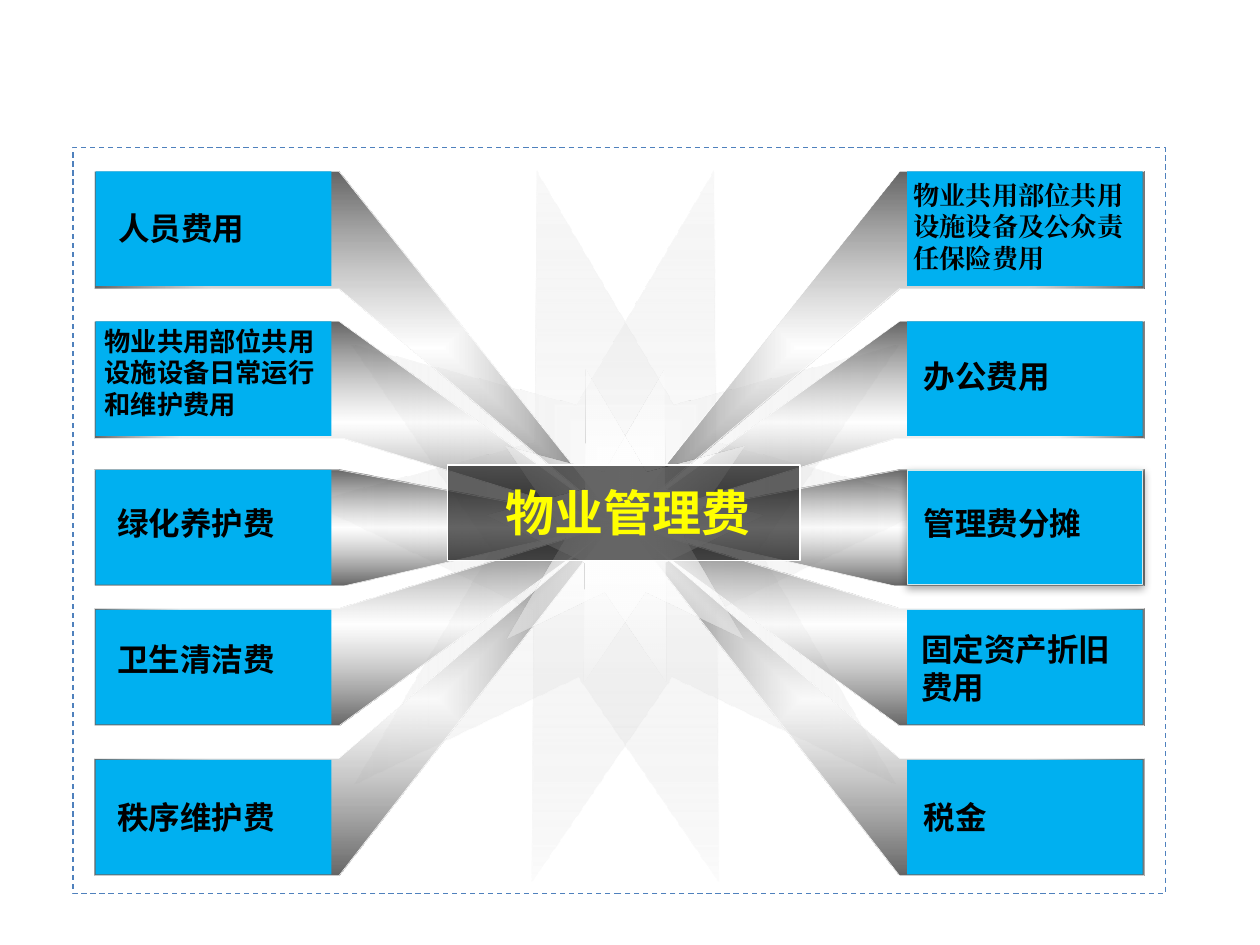
"""Build a slide showing the ten cost items that make up a property management fee."""
from lxml import etree
from pptx import Presentation
from pptx import util as u
from pptx.dml.color import RGBColor
from pptx.enum import dml, shapes, text
from pptx.oxml import parse_xml
from pptx.oxml.ns import nsdecls, qn

BLUE = RGBColor(0x00, 0xB0, 0xF0)
FRAME_BLUE = RGBColor(0x4F, 0x81, 0xBD)
PALE_BLUE = RGBColor(0xD5, 0xE8, 0xEA)
BLACK = RGBColor(0x00, 0x00, 0x00)
WHITE = RGBColor(0xFF, 0xFF, 0xFF)
GREY = RGBColor(0xB6, 0xB6, 0xB6)
YELLOW = RGBColor(0xFF, 0xFF, 0x00)
SANS = "Noto Sans CJK SC"
SERIF = "Times New Roman"
SHADOW = (
    "<a:effectLst %s><a:outerShdw blurRad='{}' dist='{}' dir='{}' algn='tl' rotWithShape='0'>"
    "<a:srgbClr val='000000'><a:alpha val='{}'/></a:srgbClr></a:outerShdw></a:effectLst>" % nsdecls("a")
)


def paint_gradient(shape, path, inner, inner_alpha, outer, outer_alpha):
    """Fill a shape from its centre outwards, with opacity in percent."""
    shape.shadow.inherit = False
    shape.fill.background()
    properties = shape._element.spPr
    gradient = parse_xml(
        f"<a:gradFill {nsdecls('a')} rotWithShape='1'><a:gsLst>"
        f"<a:gs pos='0'><a:srgbClr val='{inner}'><a:alpha val='{inner_alpha * 1000}'/></a:srgbClr></a:gs>"
        f"<a:gs pos='100000'><a:srgbClr val='{outer}'><a:alpha val='{outer_alpha * 1000}'/></a:srgbClr></a:gs>"
        f"</a:gsLst><a:path path='{path}'><a:fillToRect l='50000' t='50000' r='50000' b='50000'/></a:path>"
        "</a:gradFill>"
    )
    properties.replace(properties.find(qn("a:noFill")), gradient)


def add_label(page, place, lines, size, align=None, wrap=False, font=SANS, color=BLACK):
    """Add bold text with a small shadow, one paragraph for each line."""
    box = page.shapes.add_textbox(*map(u.Inches, place))
    frame = box.text_frame
    frame.margin_left = frame.margin_right = frame.margin_top = frame.margin_bottom = 0
    frame.word_wrap = wrap
    frame.auto_size = text.MSO_AUTO_SIZE.SHAPE_TO_FIT_TEXT
    frame.text = "\n".join(lines)
    for para in frame.paragraphs:
        para.alignment = align
        para.font.size = u.Pt(size)
        para.font.bold = True
        para.font.name = font
        para.font.color.rgb = color
        indent = para._p.get_or_add_pPr()
        indent.set("marL", str(u.Inches(0.09)))
        indent.set("indent", str(-u.Inches(0.09)))
        for span in para.runs:
            properties = span._r.get_or_add_rPr()
            properties.append(parse_xml(SHADOW.format(0, 25400, 2700000, 60000)))
            etree.SubElement(properties, qn("a:ea")).set("typeface", font)


deck = Presentation()
deck.slide_width = u.Inches(10)
deck.slide_height = u.Inches(7.5)
page = deck.slides.add_slide(deck.slide_layouts[6])

border = page.shapes.add_shape(
    shapes.MSO_SHAPE.RECTANGLE, u.Inches(0.58), u.Inches(1.17), u.Inches(8.67), u.Inches(5.92)
)
border.shadow.inherit = False
border.fill.background()
border.line.color.rgb = FRAME_BLUE
border.line.width = u.Pt(0.75)
border.line.dash_style = dml.MSO_LINE.DASH

large_star = ((2.54, 1.26, 4.84, 5.44), 50, GREY)
small_star = ((3.9, 2.89, 2.12, 2.39), 100, WHITE)
rays = [
    (4.92, 7.14, 1.36, 7.14, 2.29),
    (4.92, 7.14, 2.55, 7.1, 3.48),
    (4.92, 7.14, 3.73, 7.1, 4.65),
    (4.92, 7.14, 4.83, 7.14, 5.76),
    (4.96, 7.14, 6.02, 7.14, 6.95),
]
for place, opacity, edge in (large_star, small_star):
    for angle in (15, 345):
        star = page.shapes.add_shape(shapes.MSO_SHAPE.STAR_5_POINT, *map(u.Inches, place))
        star.rotation = angle
        star.line.fill.background()
        paint_gradient(star, "shape", WHITE, opacity, edge, 0)
    if edge == WHITE:
        continue
    for mirrored in (False, True):
        for tip, upper, top, lower, bottom in rays:
            outline = [(tip, 4.15), (upper, top), (9.08, top), (9.08, bottom), (lower, bottom)]
            points = [(u.Inches(9.83 - x if mirrored else x), u.Inches(y)) for x, y in outline]
            builder = page.shapes.build_freeform(*points[0])
            builder.add_line_segments(points[1:], close=True)
            ray = builder.convert_to_shape()
            ray.line.color.rgb = WHITE
            ray.line.width = u.Pt(0.25)
            paint_gradient(ray, "rect", WHITE, 40, BLACK, 60)

bar = page.shapes.add_shape(
    shapes.MSO_SHAPE.RECTANGLE, u.Inches(3.55), u.Inches(3.69), u.Inches(2.8), u.Inches(0.76)
)
bar.shadow.inherit = False
bar.fill.solid()
bar.fill.fore_color.rgb = BLACK
bar.line.color.rgb = WHITE
bar.line.width = u.Pt(0.75)
bar_color = bar._element.spPr.find(qn("a:solidFill")).find(qn("a:srgbClr"))
etree.SubElement(bar_color, qn("a:alpha")).set("val", "60000")
CENTER = text.PP_ALIGN.CENTER
add_label(page, (4, 3.83, 1.97, 0.47), ["物业管理费"], 28, CENTER, color=YELLOW)

for left in (0.76, 7.2):
    for top in (1.36, 2.55, 3.73, 4.84, 6.03):
        card = page.shapes.add_shape(
            shapes.MSO_SHAPE.RECTANGLE, u.Inches(left), u.Inches(top), u.Inches(1.87), u.Inches(0.91)
        )
        card.shadow.inherit = False
        card.fill.solid()
        card.fill.fore_color.rgb = BLUE
        card.line.fill.background()
        if (left, top) == (7.2, 3.73):
            card.line.color.rgb = PALE_BLUE
            card.line.width = u.Pt(0.75)
            properties = card._element.spPr
            glow = parse_xml(SHADOW.format(u.Pt(5), u.Pt(1.8), 5400000, 35000))
            properties.replace(properties.find(qn("a:effectLst")), glow)

for place, label in [
    ((0.93, 1.66, 1.02, 0.3), "人员费用"),
    ((0.92, 4, 1.27, 0.3), "绿化养护费"),
    ((0.92, 5.08, 1.27, 0.3), "卫生清洁费"),
    ((0.92, 6.33, 1.27, 0.3), "秩序维护费"),
]:
    add_label(page, place, [label], 18, CENTER)
for place, lines in [
    ((7.33, 2.83, 1.02, 0.3), ["办公费用"]),
    ((7.33, 4, 1.27, 0.3), ["管理费分摊"]),
    ((7.31, 5, 1.55, 0.61), ["固定资产折旧", "费用"]),
]:
    add_label(page, place, lines, 18)
add_label(page, (7.33, 6.33, 0.54, 0.3), ["税金"], 18, wrap=True)
upkeep = ["物业共用部位共用", "设施设备日常运行", "和维护费用"]
insurance = ["物业共用部位共用", "设施设备及公众责", "任保险费用"]
add_label(page, (0.83, 2.58, 1.83, 0.76), upkeep, 15, wrap=True)
add_label(page, (7.25, 1.42, 1.67, 0.76), insurance, 15, wrap=True, font=SERIF)

deck.save("out.pptx")
